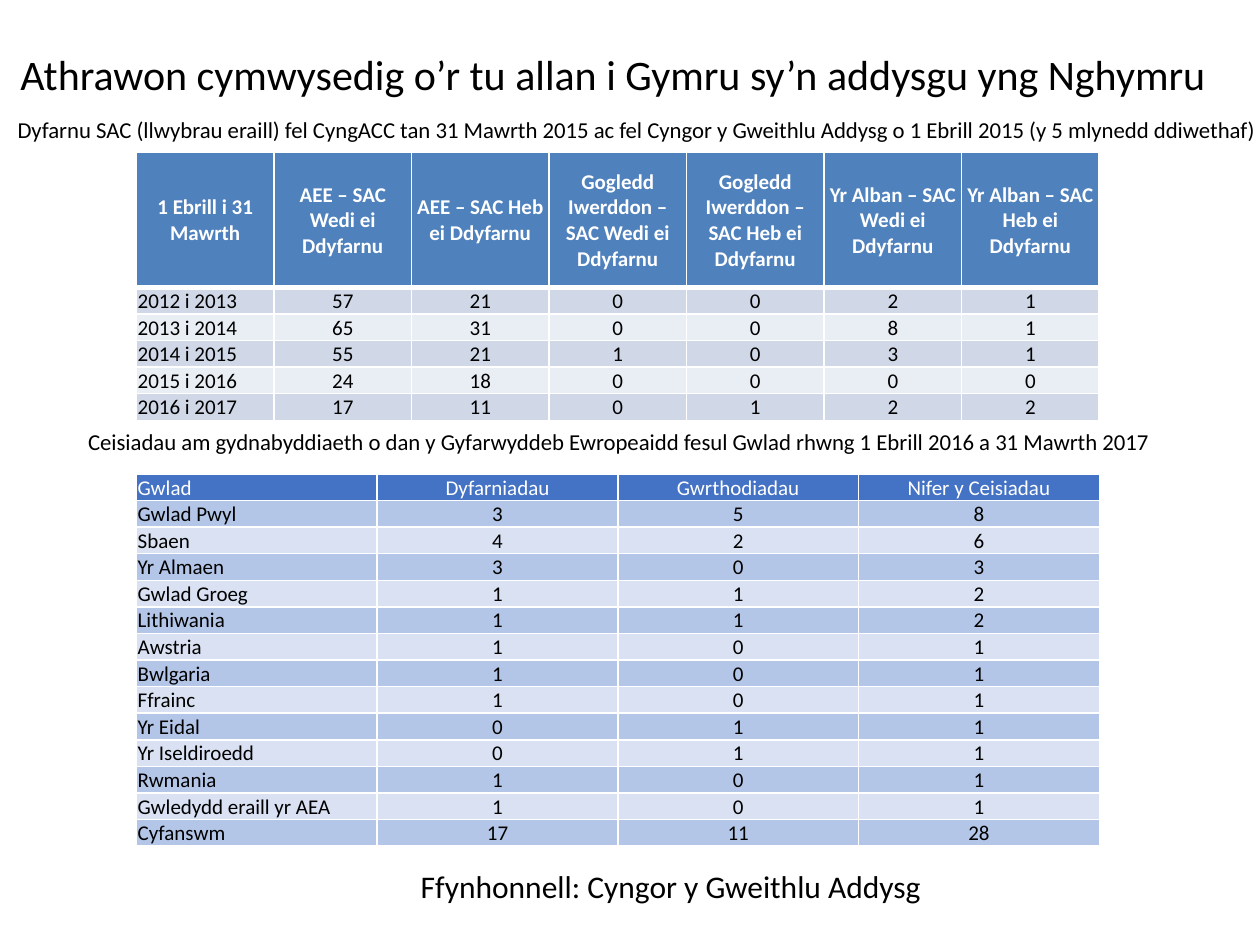
from lxml import etree
from pptx import Presentation
from pptx.dml.color import RGBColor
from pptx.enum.text import MSO_ANCHOR, MSO_AUTO_SIZE, PP_ALIGN
from pptx.oxml.ns import qn
from pptx.util import Pt

LEFT, MID = PP_ALIGN.LEFT, PP_ALIGN.CENTER
MIDDLE = MSO_ANCHOR.MIDDLE
GROW, FIXED = MSO_AUTO_SIZE.SHAPE_TO_FIT_TEXT, MSO_AUTO_SIZE.NONE

BLACK = RGBColor(0x00, 0x00, 0x00)
WHITE = RGBColor(0xFF, 0xFF, 0xFF)
STEEL = RGBColor(0x4F, 0x81, 0xBD)
PALE = RGBColor(0xD0, 0xD8, 0xE8)
MIST = RGBColor(0xE9, 0xED, 0xF4)
BLUE = RGBColor(0x44, 0x72, 0xC4)
SKY = RGBColor(0xB4, 0xC6, 0xE7)
ICE = RGBColor(0xD9, 0xE1, 0xF2)

FONT = "Calibri"
ROW = 15.2
WIDTH = 550.2


def write(frame, text, size, align=LEFT, color=BLACK, bold=False):
    para = frame.paragraphs[0]
    para.alignment = align
    run = para.add_run()
    run.text = text
    font = run.font
    font.name, font.size, font.bold = FONT, Pt(size), bold
    font.color.rgb = color


def edge(cell, side, width):
    line = etree.SubElement(cell._tc.get_or_add_tcPr(), qn("a:ln" + side),
                            w=str(Pt(width)))
    fill = etree.SubElement(line, qn("a:solidFill"))
    etree.SubElement(fill, qn("a:srgbClr"), val=str(WHITE))


prs = Presentation()
prs.slide_width, prs.slide_height = Pt(720), Pt(540)
slide = prs.slides.add_slide(prs.slide_layouts[5])

# Title
title = slide.shapes.title
title.left, title.top, title.width, title.height = Pt(4.5), Pt(6.5), Pt(701), Pt(71)
title.text_frame.auto_size = FIXED
title.text_frame.vertical_anchor = MIDDLE
write(title.text_frame,
      "Athrawon cymwysedig o’r tu allan i Gymru sy’n addysgu yng Nghymru", 24)

# Table captions and source
notes = [
    (20, 241, 666, 23, 13, MID, "Ceisiadau am gydnabyddiaeth o dan y Gyfarwyddeb "
     "Ewropeaidd fesul Gwlad rhwng 1 Ebrill 2016 a 31 Mawrth 2017"),
    (-1, 62.6, 728.5, 23, 13, MID, "Dyfarnu SAC (llwybrau eraill) fel CyngACC tan "
     "31 Mawrth 2015 ac fel Cyngor y Gweithlu Addysg o 1 Ebrill 2015 "
     "(y 5 mlynedd ddiwethaf)"),
    (233.3, 491.8, 396.7, 29, 18, LEFT, "Ffynhonnell: Cyngor y Gweithlu Addysg"),
]
for x, y, w, h, size, align, text in notes:
    box = slide.shapes.add_textbox(Pt(x), Pt(y), Pt(w), Pt(h))
    box.text_frame.word_wrap = True
    box.text_frame.auto_size = GROW
    write(box.text_frame, text, size, align)

# Table contents
awards = [
    ("1 Ebrill i 31 Mawrth", "AEE – SAC Wedi ei Ddyfarnu",
     "AEE – SAC Heb ei Ddyfarnu", "Gogledd Iwerddon – SAC Wedi ei Ddyfarnu",
     "Gogledd Iwerddon – SAC Heb ei Ddyfarnu",
     "Yr Alban – SAC Wedi ei Ddyfarnu", "Yr Alban – SAC Heb ei Ddyfarnu"),
    ("2012 i 2013", 57, 21, 0, 0, 2, 1),
    ("2013 i 2014", 65, 31, 0, 0, 8, 1),
    ("2014 i 2015", 55, 21, 1, 0, 3, 1),
    ("2015 i 2016", 24, 18, 0, 0, 0, 0),
    ("2016 i 2017", 17, 11, 0, 1, 2, 2),
]
lands = [
    ("Gwlad", "Dyfarniadau", "Gwrthodiadau", "Nifer y Ceisiadau"),
    ("Gwlad Pwyl", 3, 5, 8),
    ("Sbaen", 4, 2, 6),
    ("Yr Almaen", 3, 0, 3),
    ("Gwlad Groeg", 1, 1, 2),
    ("Lithiwania", 1, 1, 2),
    ("Awstria", 1, 0, 1),
    ("Bwlgaria", 1, 0, 1),
    ("Ffrainc", 1, 0, 1),
    ("Yr Eidal", 0, 1, 1),
    ("Yr Iseldiroedd", 0, 1, 1),
    ("Rwmania", 1, 0, 1),
    ("Gwledydd eraill yr AEA", 1, 0, 1),
    ("Cyfanswm", 17, 11, 28),
]

# Tables: rows, top, header height, header fill, bands, strong header, rule under it
tables = [
    (awards, 87.2, 77, STEEL, (MIST, PALE), True, 3),
    (lands, 270.8, ROW, BLUE, (ICE, SKY), False, 1),
]
for rows, top, head, dark, bands, strong, rule in tables:
    count = len(rows[0])
    high = head + ROW * (len(rows) - 1)
    grid = slide.shapes.add_table(len(rows), count, Pt(78), Pt(top),
                                  Pt(WIDTH), Pt(high)).table
    grid.horz_banding = False
    for col in grid.columns:
        col.width = Pt(WIDTH / count)
    for r, row in enumerate(rows):
        first = r == 0
        grid.rows[r].height = Pt(head if first else ROW)
        for c, value in enumerate(row):
            cell = grid.cell(r, c)
            cell.margin_left = cell.margin_right = cell.margin_top = Pt(0.7)
            cell.margin_bottom = 0
            cell.vertical_anchor = MIDDLE
            edge(cell, "L", 1)
            edge(cell, "R", 1)
            edge(cell, "T", rule if r == 1 else 1)
            edge(cell, "B", rule if first else 1)
            cell.fill.solid()
            cell.fill.fore_color.rgb = dark if first else bands[r % 2]
            align = LEFT if c == 0 and not (first and strong) else MID
            write(cell.text_frame, str(value), 12, align,
                  WHITE if first else BLACK, first and strong)

prs.save("out.pptx")
